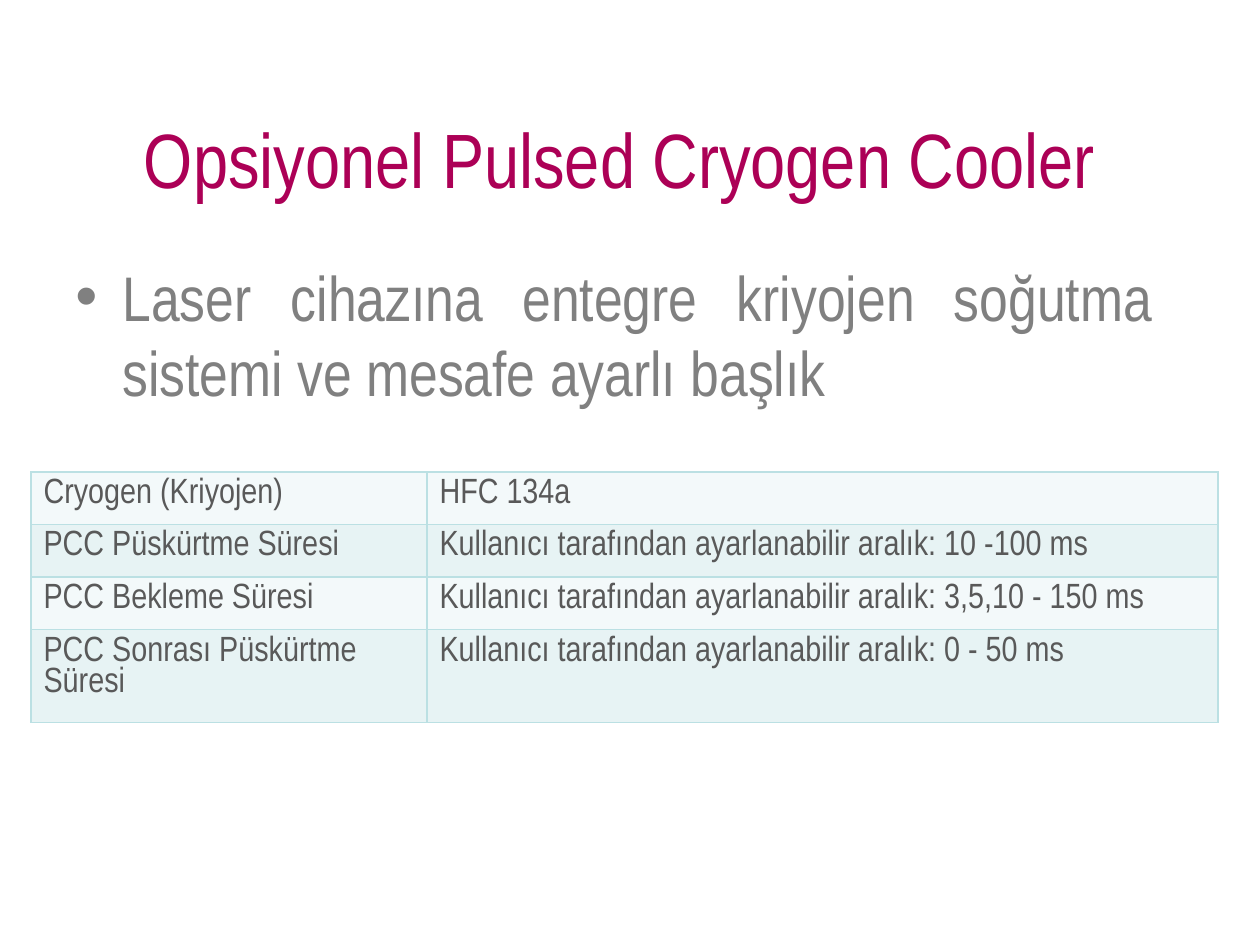
from lxml.etree import SubElement
from pptx import Presentation
from pptx.dml.color import RGBColor
from pptx.enum.text import MSO_ANCHOR, PP_ALIGN
from pptx.oxml.ns import qn
from pptx.util import Pt

TITLE = "Opsiyonel Pulsed Cryogen Cooler"
BULLET = "Laser cihazına entegre kriyojen soğutma sistemi ve mesafe ayarlı başlık"
ROWS = [
    ("Cryogen (Kriyojen)", "HFC 134a"),
    ("PCC Püskürtme Süresi", "Kullanıcı tarafından ayarlanabilir aralık: 10 -100 ms"),
    ("PCC Bekleme Süresi", "Kullanıcı tarafından ayarlanabilir aralık: 3,5,10 - 150 ms"),
    ("PCC Sonrası Püskürtme Süresi", "Kullanıcı tarafından ayarlanabilir aralık: 0 - 50 ms"),
]
COLUMN_WIDTHS = (396, 791)
ROW_HEIGHTS = (51, 51, 51, 78)

FONT = "Arial Narrow"
MAGENTA = RGBColor(0xAC, 0x00, 0x56)
GRAY = RGBColor(0x80, 0x80, 0x80)
DARK_GRAY = RGBColor(0x59, 0x59, 0x59)
BORDER = RGBColor(0xBB, 0xE0, 0xE3)
BANDS = (RGBColor(0xF3, 0xF9, 0xFA), RGBColor(0xE7, 0xF3, 0xF4))


def px(length):
    return round(length * 914400 / 126)


def style(para, size, color):
    para.font.name = FONT
    para.font.size = Pt(size)
    para.font.color.rgb = color


def add_text(page, area, text, align):
    frame = page.shapes.add_textbox(*map(px, area)).text_frame
    frame.word_wrap = True
    frame.vertical_anchor = MSO_ANCHOR.TOP
    para = frame.paragraphs[0]
    para.text = text
    para.alignment = align
    return para


def add_bullet(para, indent):
    props = para._p.get_or_add_pPr()
    props.set("marL", str(px(indent)))
    props.set("indent", str(-px(indent)))
    SubElement(props, qn("a:buFont")).set("typeface", "Arial")
    SubElement(props, qn("a:buChar")).set("char", "•")


def add_borders(cell):
    props = cell._tc.get_or_add_tcPr()
    for side in ("lnL", "lnR", "lnT", "lnB"):
        line = SubElement(props, qn(f"a:{side}"), w=str(Pt(1)))
        fill = SubElement(line, qn("a:solidFill"))
        SubElement(fill, qn("a:srgbClr"), val=str(BORDER))


def add_grid(page, left, top):
    size = map(px, (left, top, sum(COLUMN_WIDTHS), sum(ROW_HEIGHTS)))
    table = page.shapes.add_table(len(ROWS), len(COLUMN_WIDTHS), *size).table
    table.first_row = False
    for column, width in zip(table.columns, COLUMN_WIDTHS):
        column.width = px(width)
    for index, (row, height, texts) in enumerate(zip(table.rows, ROW_HEIGHTS, ROWS)):
        row.height = px(height)
        for cell, text in zip(row.cells, texts):
            cell.text = text
            add_borders(cell)
            cell.fill.solid()
            cell.fill.fore_color.rgb = BANDS[index % 2]
            para = cell.text_frame.paragraphs[0]
            para.line_spacing = 0.95
            style(para, 20, DARK_GRAY)


def main():
    deck = Presentation()
    deck.slide_width, deck.slide_height = px(1260), px(945)
    page = deck.slides.add_slide(deck.slide_layouts[6])
    title = add_text(page, (53, 105, 1134, 142), TITLE, PP_ALIGN.CENTER)
    style(title, 44, MAGENTA)
    body = add_text(page, (63, 252, 1102, 592), BULLET, PP_ALIGN.JUSTIFY)
    add_bullet(body, 47)
    style(body, 36, GRAY)
    add_grid(page, 31, 472)
    deck.save("out.pptx")


if __name__ == "__main__":
    main()
